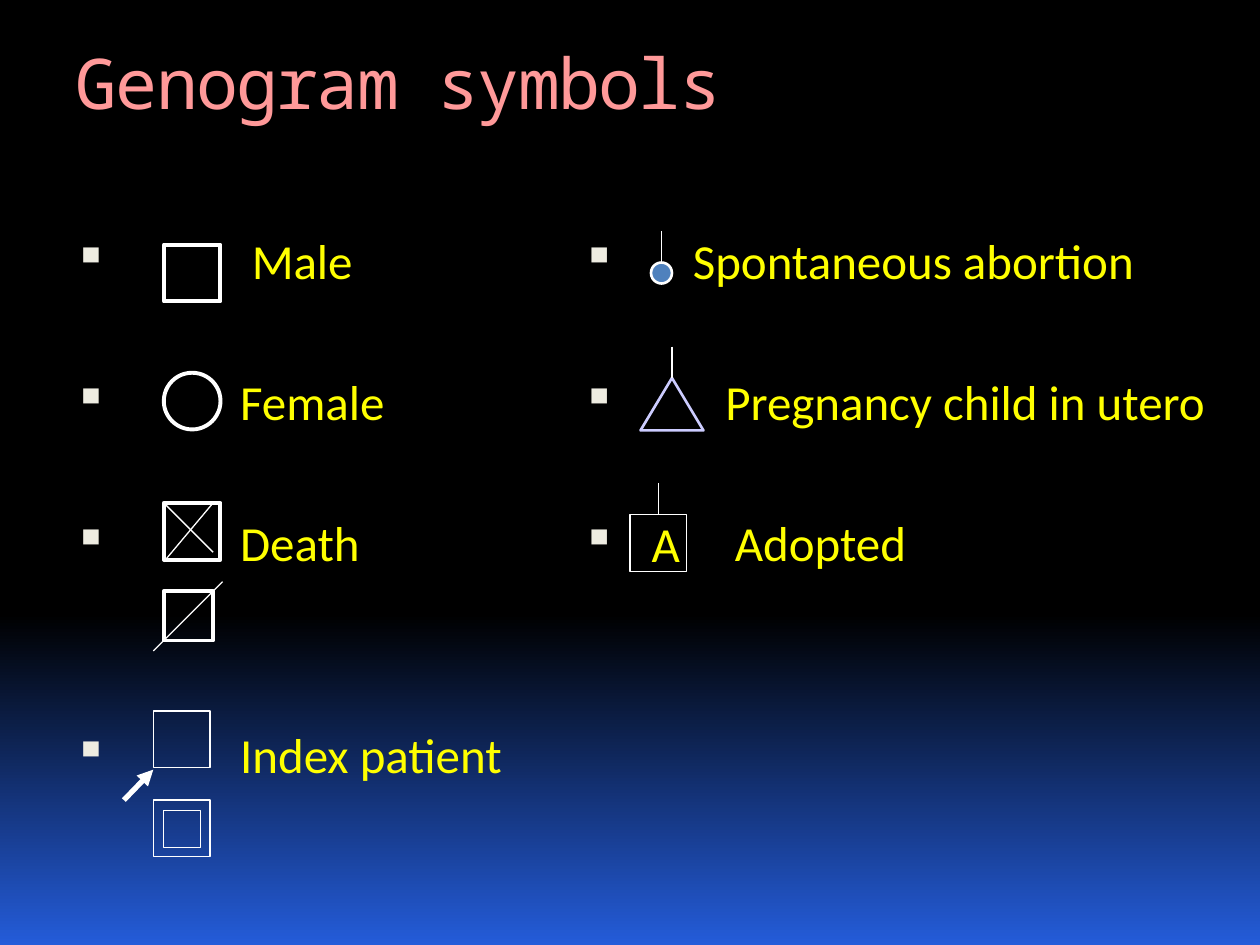
from dataclasses import dataclass

from lxml import etree
from pptx import Presentation
from pptx import util as u
from pptx.dml import color
from pptx.enum import shapes, text
from pptx.oxml import ns

COLORS = {
    "night": "000000", "dawn": "245CD9", "title": "FF9999", "label": "FFFF00",
    "bullet": "EEECE1", "white": "FFFFFF", "lilac": "CCCCFF", "blue": "4F81BD",
}
COLUMNS, ROWS = 120, 90
SIDE = 5.4
BULLET_COLUMN = 0.84
LINE_PITCH, LINE_HEIGHT = 40.55, 34.18
RECT, OVAL = shapes.MSO_SHAPE.RECTANGLE, shapes.MSO_SHAPE.OVAL
TRIANGLE = shapes.MSO_SHAPE.ISOSCELES_TRIANGLE


@dataclass
class Entry:
    label: str
    column: float
    lines_down: int = 2


@dataclass
class Symbol:
    kind: shapes.MSO_SHAPE
    column: float
    row: float
    width: float = SIDE
    height: float = SIDE
    weight: float = 0.75
    line: str = "white"
    fill: str = ""
    stem: float = 0
    letter: str = ""


@dataclass
class Stroke:
    start: tuple[float, float]
    end: tuple[float, float]
    weight: float = 0.75
    arrow: bool = False


LEFT_ENTRIES = [Entry("Male", 24, 0), Entry("Female", 22.9),
                Entry("Death", 22.9), Entry("Index patient", 22.9, 3)]
RIGHT_ENTRIES = [Entry("Spontaneous abortion", 66, 0),
                 Entry("Pregnancy child in utero", 69.1), Entry("Adopted", 70)]
SYMBOLS = [
    Symbol(RECT, 15.6, 23.3, weight=2.25),
    Symbol(OVAL, 15.6, 35.5, weight=2.25),
    Symbol(RECT, 15.6, 47.9, weight=2.25),
    Symbol(RECT, 15.6, 56.3, 4.7, 4.7, weight=2.25),
    Symbol(RECT, 14.6, 67.7),
    Symbol(RECT, 14.6, 76.2),
    Symbol(RECT, 15.6, 77.2, 3.5, 3.5),
    Symbol(OVAL, 62, 25, 2, 2, 1.5, fill="blue", stem=3),
    Symbol(TRIANGLE, 61, 36, 6, 5, 1.5, "lilac", stem=3),
    Symbol(RECT, 60, 49, stem=3, letter="A"),
]
STROKES = [
    Stroke((15.6, 47.9), (20.3, 52.6)),
    Stroke((15.6, 53.5), (20.3, 47.9)),
    Stroke((14.6, 62), (21.2, 55.4)),
    Stroke((11.8, 76.2), (14.6, 73.3), 3, True),
]

deck = Presentation()
deck.slide_width, deck.slide_height = u.Inches(10), u.Inches(7.5)


def across(columns: float) -> int:
    """Turn grid columns into a length."""
    return round(deck.slide_width * columns / COLUMNS)


def down(rows: float) -> int:
    """Turn grid rows into a length."""
    return round(deck.slide_height * rows / ROWS)


def rgb(name: str) -> color.RGBColor:
    """Look up a named colour."""
    return color.RGBColor.from_string(COLORS[name])


def add_text(paragraph, words: str, *, size=28, font="Calibri", ink="label", spacing=0):
    """Add a formatted run to a paragraph."""
    run = paragraph.add_run()
    run.text = words
    run.font.size, run.font.name = u.Pt(size), font
    run.font.color.rgb = rgb(ink)
    if spacing:
        run.font._element.set("spc", str(spacing))


def add_bullet(paragraph, indent: int) -> None:
    """Hang a small square bullet ahead of the paragraph's text."""
    properties = paragraph._p.get_or_add_pPr()
    properties.set("marL", str(indent))
    properties.set("indent", str(across(BULLET_COLUMN) - indent))
    tint = etree.SubElement(properties, ns.qn("a:buClr"))
    etree.SubElement(tint, ns.qn("a:srgbClr"), val=COLORS["bullet"])
    etree.SubElement(properties, ns.qn("a:buSzPct"), val="95000")
    etree.SubElement(properties, ns.qn("a:buChar"), char="▪")


def add_entries(slide, entries: list[Entry], left: float, width: float) -> None:
    """Write one column of bulleted symbol names."""
    box = slide.shapes.add_textbox(across(left), down(21.4), across(width), down(59.4))
    frame = box.text_frame
    frame.word_wrap = True
    for index, entry in enumerate(entries):
        paragraph = frame.add_paragraph() if index else frame.paragraphs[0]
        gap = entry.lines_down * LINE_PITCH - LINE_HEIGHT if index else 0
        paragraph.space_before = u.Pt(round(gap, 1))
        add_bullet(paragraph, across(entry.column - left) - frame.margin_left)
        add_text(paragraph, entry.label)


def add_stroke(slide, stroke: Stroke):
    """Draw a straight white line, with an arrowhead if asked."""
    (x1, y1), (x2, y2) = stroke.start, stroke.end
    line = slide.shapes.add_connector(
        shapes.MSO_CONNECTOR.STRAIGHT, across(x1), down(y1), across(x2), down(y2))
    line.line.color.rgb = rgb("white")
    line.line.width = u.Pt(stroke.weight)
    if stroke.arrow:
        etree.SubElement(line.line._get_or_add_ln(), ns.qn("a:tailEnd"), type="triangle")
    etree.SubElement(line._element.spPr, ns.qn("a:effectLst"))
    return line


def add_symbol(slide, symbol: Symbol) -> None:
    """Draw a genogram symbol with its optional stem and letter."""
    figure = slide.shapes.add_shape(
        symbol.kind, across(symbol.column), down(symbol.row),
        across(symbol.width), down(symbol.height))
    figure.shadow.inherit = False
    if symbol.fill:
        figure.fill.solid()
        figure.fill.fore_color.rgb = rgb(symbol.fill)
    else:
        figure.fill.background()
    figure.line.color.rgb = rgb(symbol.line)
    figure.line.width = u.Pt(symbol.weight)
    if symbol.letter:
        frame = figure.text_frame
        frame.margin_left, frame.margin_right = across(1.4), 0
        frame.margin_top = frame.margin_bottom = 0
        frame.vertical_anchor = text.MSO_ANCHOR.MIDDLE
        frame.paragraphs[0].alignment = text.PP_ALIGN.CENTER
        add_text(frame.paragraphs[0], symbol.letter)
    if symbol.stem:
        middle = symbol.column + symbol.width / 2
        stem = add_stroke(slide, Stroke((middle, symbol.row - symbol.stem),
                                        (middle, symbol.row)))
        stem.end_connect(figure, 0)


def add_title(slide, words: str) -> None:
    """Place and format the slide's title."""
    title = slide.shapes.title
    title.left, title.top = across(6), down(3.2)
    title.width, title.height = across(108), down(18.4)
    title.text_frame.vertical_anchor = text.MSO_ANCHOR.TOP
    paragraph = title.text_frame.paragraphs[0]
    paragraph.alignment = text.PP_ALIGN.LEFT
    add_text(paragraph, words, size=40, font="Noto Sans Mono", ink="title", spacing=-100)


def paint_background(slide) -> None:
    """Fade the background from black to blue below its 65% mark."""
    fill = slide.background.fill
    fill.gradient()
    fill.gradient_angle = 270
    for stop, (position, name) in zip(fill.gradient_stops, [(0.65, "night"), (1, "dawn")]):
        stop.position = position
        stop.color.rgb = rgb(name)


def main() -> None:
    """Build the genogram slide and save it."""
    slide = deck.slides.add_slide(deck.slide_layouts[5])
    paint_background(slide)
    add_title(slide, "Genogram symbols")
    add_entries(slide, LEFT_ENTRIES, 5, 53)
    add_entries(slide, RIGHT_ENTRIES, 53.4, 66.6)
    for symbol in SYMBOLS:
        add_symbol(slide, symbol)
    for stroke in STROKES:
        add_stroke(slide, stroke)
    deck.save("out.pptx")


if __name__ == "__main__":
    main()
